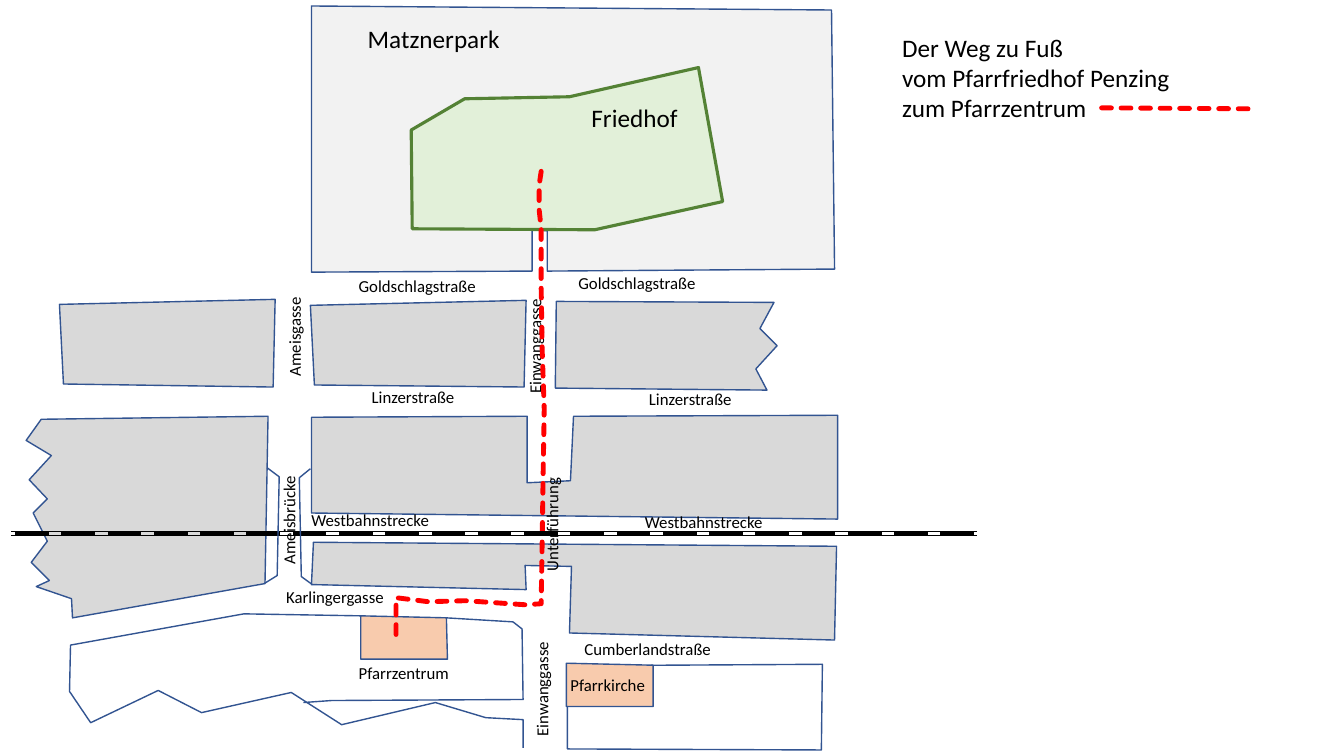
from dataclasses import dataclass

from lxml import etree
from pptx import Presentation
from pptx import util as u
from pptx.dml.color import RGBColor
from pptx.enum import dml, shapes, text
from pptx.oxml.ns import qn

Point = tuple[float, float]

CM_PER_MAP_UNIT = 2.54
FONT = "Calibri"
COLOURS = {
    "park": "F2F2F2",
    "cemetery": "E2F0D9",
    "cemetery_edge": "548235",
    "block": "D9D9D9",
    "parish": "F8CBAD",
    "edge": "325491",
    "route": "FF0000",
    "ink": "000000",
}


@dataclass
class Outline:
    points: list[Point]
    fill: str | None = None
    edge: str = "edge"
    width: float = 1
    dashed: bool = False


@dataclass
class Label:
    wording: str
    left: float
    top: float
    width: float
    height: float = 0.3
    size: int = 12
    rotation: int = 0


@dataclass
class Rail:
    left: float
    level: float
    width: float
    dashed: bool = False


AREAS = [
    Outline([(3.09, 0.06), (3.09, 2.7), (5.28, 2.69), (5.28, 2.28), (5.43, 2.29),
             (5.43, 2.69), (8.28, 2.67), (8.25, 0.1)], "park"),
    Outline([(4.08, 1.29), (4.09, 2.27), (5.9, 2.28), (7.17, 2), (6.93, 0.67),
             (5.65, 0.96), (4.61, 0.98)], "cemetery", "cemetery_edge", 2.25),
    # Blocks between Goldschlagstraße and Linzerstraße
    Outline([(0.59, 3.02), (2.73, 2.97), (2.71, 3.84), (0.63, 3.81)], "block"),
    Outline([(3.08, 3.03), (5.22, 2.98), (5.2, 3.84), (3.12, 3.82)], "block"),
    Outline([(5.52, 2.99), (5.51, 3.85), (7.61, 3.87), (7.5, 3.66), (7.71, 3.43),
             (7.54, 3.26), (7.68, 3)], "block"),
    # Blocks along the railway
    Outline([(3.09, 4.14), (5.23, 4.13), (5.23, 4.79), (5.66, 4.77), (5.69, 4.13),
             (8.31, 4.12), (8.31, 5.15), (3.09, 5.09)], "block"),
    Outline([(3.11, 5.38), (8.3, 5.42), (8.28, 6.35), (5.65, 6.28), (5.67, 5.62),
             (5.21, 5.61), (5.22, 5.85), (3.09, 5.8)], "block"),
    Outline([(0.41, 4.16), (0.26, 4.37), (0.51, 4.52), (0.29, 4.76), (0.47, 4.95),
             (0.33, 5.09), (0.47, 5.37), (0.31, 5.58), (0.49, 5.76), (0.36, 5.82),
             (0.71, 5.94), (0.72, 6.13), (2.63, 5.79), (2.66, 4.13)], "block"),
    # Parish centre and church with their surroundings
    Outline([(3.58, 6.11), (3.58, 6.54), (4.44, 6.54), (4.43, 6.13)], "parish"),
    Outline([(3.58, 6.11), (2.42, 6.09), (0.7, 6.4), (0.69, 6.86), (0.9, 7.17),
             (1.57, 6.85), (2, 7.07), (2.89, 6.87), (3.39, 7.19), (4.32, 6.97),
             (4.82, 7.12), (5.19, 7.14), (5.19, 7.42)]),
    Outline([(4.43, 6.13), (5.09, 6.17), (5.18, 6.24), (5.19, 6.94), (3.29, 6.95),
             (3.01, 6.97)]),
    Outline([(5.62, 6.58), (5.62, 7.01), (6.48, 7.01), (6.48, 6.6)], "parish"),
    Outline([(6.46, 6.6), (8.16, 6.59), (8.15, 7.44), (5.63, 7.43), (5.63, 7.01)]),
]
BRIDGE_SIDES = [
    Outline([(2.65, 4.64), (2.77, 4.73), (2.75, 5.71), (2.62, 5.79)]),
    Outline([(3.08, 4.65), (2.97, 4.74), (2.99, 5.72), (3.1, 5.8)]),
]
ROUTES = [
    Outline([(5.37, 1.7), (5.35, 1.84), (5.35, 2.08), (5.37, 2.27), (5.37, 2.86),
             (5.38, 3.48), (5.4, 4.06), (5.39, 4.67), (5.38, 5.35), (5.37, 5.99),
             (5.21, 6), (4.62, 5.96), (4.25, 5.97), (3.93, 5.93), (3.93, 6.3),
             (3.96, 6.3)], None, "route", 3.5, True),
    Outline([(10.93, 1.07), (12.46, 1.08)], None, "route", 3.5, True),
]
LABELS = [
    Label("Matznerpark", 3.55, 0.18, 1.52, 0.4, 18),
    Label("Friedhof", 5.77, 0.97, 1.07, 0.4, 18),
    Label("Goldschlagstraße", 3.46, 2.69, 1.38),
    Label("Goldschlagstraße", 5.64, 2.66, 1.38),
    Label("Linzerstraße", 3.59, 3.79, 1.03),
    Label("Linzerstraße", 6.34, 3.81, 1.03),
    Label("Westbahnstrecke", 2.99, 5.01, 1.38),
    Label("Westbahnstrecke", 6.3, 5.03, 1.38),
    Label("Karlingergasse", 2.74, 5.77, 1.18),
    Label("Cumberlandstraße", 5.7, 6.29, 1.47),
    Label("Pfarrzentrum", 3.46, 6.53, 1.1),
    Label("Pfarrkirche", 5.56, 6.64, 0.95),
    Label("Ameisgasse", 2.42, 3.18, 1, rotation=270),
    Label("Ameisbrücke", 2.32, 5, 1.09, rotation=270),
    Label("Einwanggasse", 4.73, 3.28, 1.15, rotation=270),
    Label("Einwanggasse", 4.8, 6.68, 1.15, rotation=270),
    Label("Unterführung", 4.91, 5.05, 1.13, rotation=270),
]
LEGEND = Label("Der Weg zu Fuß\nvom Pfarrfriedhof Penzing\nzum Pfarrzentrum",
               8.85, 0.27, 2.94, 1.01, 18)
RAILS = [Rail(0.15, 5.29, 3, True), Rail(0.11, 5.27, 0.5), Rail(0.11, 5.31, 0.5)]
RAIL_END = 9.69


def length(units: float) -> u.Length:
    """Convert map units to a slide length."""
    return u.Cm(units * CM_PER_MAP_UNIT)


def colour(name: str) -> RGBColor:
    return RGBColor.from_string(COLOURS[name])


def draw_outline(page, outline: Outline) -> None:
    """Draw a closed area if it has a fill, otherwise an open line."""
    start, *rest = [(length(x), length(y)) for x, y in outline.points]
    builder = page.shapes.build_freeform(*start)
    builder.add_line_segments(rest, close=outline.fill is not None)
    shape = builder.convert_to_shape()
    shape.shadow.inherit = False
    if outline.fill:
        shape.fill.solid()
        shape.fill.fore_color.rgb = colour(outline.fill)
    else:
        shape.fill.background()
    shape.line.color.rgb = colour(outline.edge)
    shape.line.width = u.Pt(outline.width)
    if outline.dashed:
        shape.line.dash_style = dml.MSO_LINE.SQUARE_DOT
        shape.line._get_or_add_ln().set("cap", "rnd")


def write_label(box, label: Label) -> None:
    """Place a text box or placeholder and fill it with the label."""
    box.left, box.top = length(label.left), length(label.top)
    box.width, box.height = length(label.width), length(label.height)
    box.rotation = label.rotation
    frame = box.text_frame
    frame.text = label.wording
    frame.word_wrap = False
    frame.auto_size = text.MSO_AUTO_SIZE.SHAPE_TO_FIT_TEXT
    frame.vertical_anchor = text.MSO_ANCHOR.TOP
    for para in frame.paragraphs:
        para.alignment = text.PP_ALIGN.LEFT
        para.font.name = FONT
        para.font.size = u.Pt(label.size)
        para.font.color.rgb = colour("ink")


def draw_rail(page, rail: Rail) -> None:
    level = length(rail.level)
    line = page.shapes.add_connector(
        shapes.MSO_CONNECTOR.STRAIGHT, length(rail.left), level, length(RAIL_END), level)
    line.line.color.rgb = colour("ink")
    line.line.width = u.Pt(rail.width)
    if rail.dashed:
        line.line.dash_style = dml.MSO_LINE.LONG_DASH
    etree.SubElement(line._element.spPr, qn("a:effectLst"))


def main() -> None:
    deck = Presentation()
    deck.slide_width, deck.slide_height = u.Cm(33.87), u.Cm(19.05)
    page = deck.slides.add_slide(deck.slide_layouts[5])
    write_label(page.shapes.title, LEGEND)
    for area in AREAS:
        draw_outline(page, area)
    for label in LABELS:
        write_label(page.shapes.add_textbox(0, 0, 0, 0), label)
    for route in ROUTES:
        draw_outline(page, route)
    for rail in RAILS:
        draw_rail(page, rail)
    for side in BRIDGE_SIDES:
        draw_outline(page, side)
    deck.save("out.pptx")


if __name__ == "__main__":
    main()
